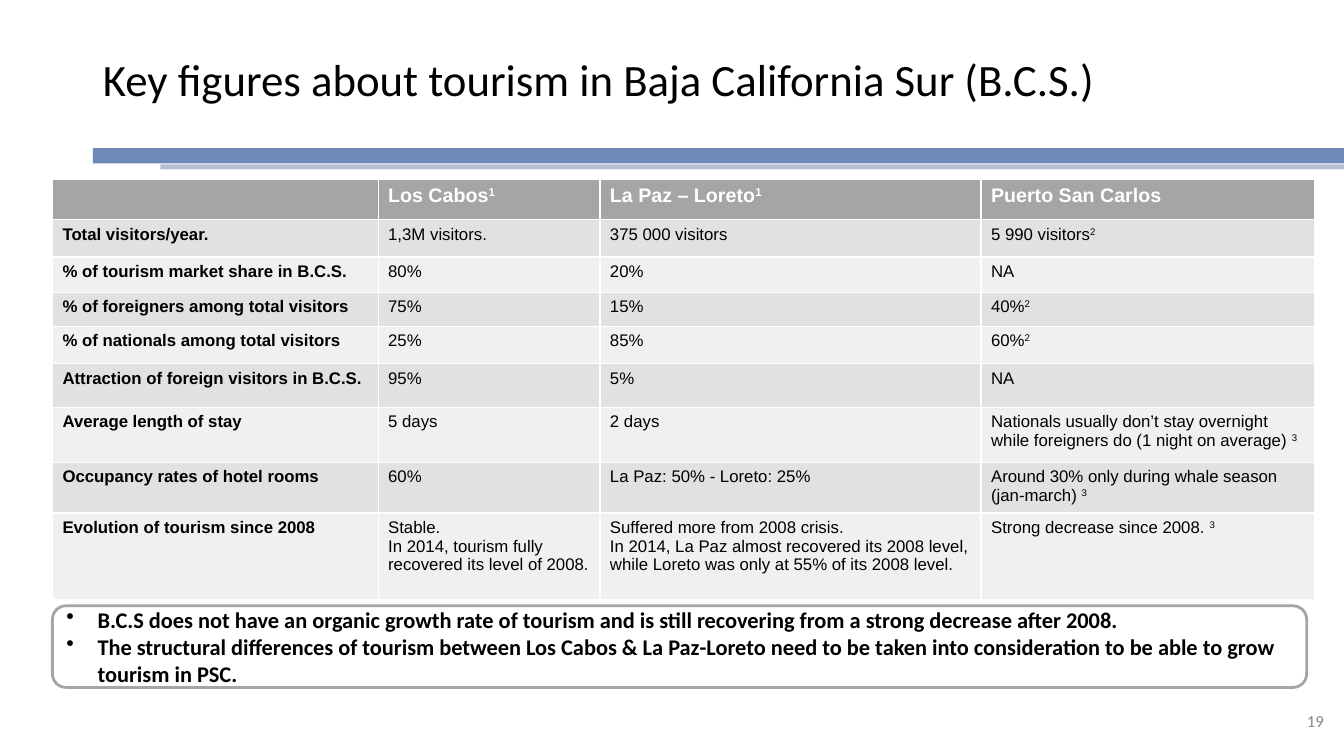
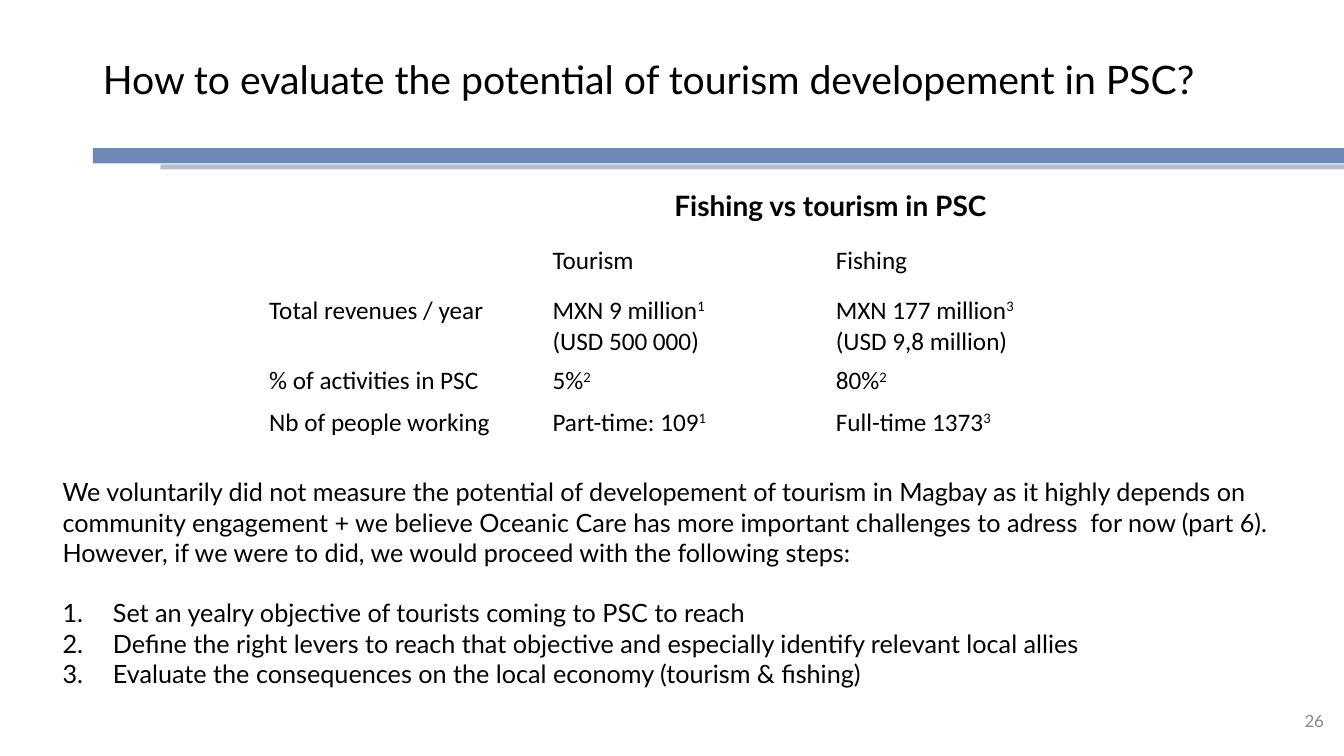
"""Build two slides about tourism in Baja California Sur."""
from lxml import etree
from pptx import Presentation
from pptx.dml.color import RGBColor
from pptx.enum import shapes, text
from pptx.oxml import ns
from pptx.util import Inches, Pt

BLACK, WHITE, GREY, NUMBER_GREY = "000000", "FFFFFF", "A5A5A5", "888888"
BANDING = ("E1E1E1", "F0F0F0")
BANDS = ((0.92, 1.47, 0.15, "2F5597", 69), (1.59, 1.63, 0.05, "002060", 29))
TITLE_ONLY, TITLE_AND_BODY = 5, 1
WIDTH, HEIGHT, MARGIN = 13.33, 7.5, 0.52


def colour(value):
    """Turn a hex string into a colour."""
    return RGBColor.from_string(value)


def inches(*lengths):
    """Turn several numbers into lengths."""
    return [Inches(length) for length in lengths]


class SlideBuilder:
    """Hold the shared style and the current slide."""

    def __init__(self):
        """Start an empty wide deck."""
        self.deck = Presentation()
        self.deck.slide_width, self.deck.slide_height = inches(WIDTH, HEIGHT)
        self.page = None
        self.font = None

    def start(self, layout, title, size, number, font):
        """Add a slide with its bands, title and number."""
        self.page = self.deck.slides.add_slide(self.deck.slide_layouts[layout])
        self.font = font
        for left, top, height, shade, opacity in BANDS:
            self.band(left, top, height, shade, opacity)
        box = self.page.shapes.title
        self.place(box, 0.92, 0.26, 12.05, 1.1)
        frame = box.text_frame
        frame.margin_top = frame.margin_bottom = Inches(0.1)
        frame.vertical_anchor = text.MSO_ANCHOR.MIDDLE
        self.set_text(frame, title, size)
        frame.paragraphs[0].alignment = text.PP_ALIGN.LEFT
        frame.paragraphs[0].line_spacing = 0.9
        footer = self.label(number, 10.23, 6.95, 3, 0.4, 12, NUMBER_GREY)
        footer.vertical_anchor = text.MSO_ANCHOR.MIDDLE
        footer.paragraphs[0].alignment = text.PP_ALIGN.RIGHT

    def place(self, box, left, top, width, height):
        """Move a placeholder and stop it from resizing its text."""
        box.left, box.top, box.width, box.height = inches(left, top, width, height)
        box.text_frame.auto_size = text.MSO_AUTO_SIZE.NONE

    def band(self, left, top, height, shade, opacity):
        """Draw a translucent band running to the right edge."""
        box = self.page.shapes.add_shape(
            shapes.MSO_SHAPE.RECTANGLE, *inches(left, top, WIDTH - left, height))
        box.shadow.inherit = False
        box.fill.solid()
        box.fill.fore_color.rgb = colour(shade)
        box.line.fill.background()
        tint = box.element.spPr.find(".//" + ns.qn("a:srgbClr"))
        etree.SubElement(tint, ns.qn("a:alpha")).set("val", str(opacity * 1000))

    def set_text(self, frame, content, size, shade=BLACK, bold=False, font=None):
        """Fill a frame line by line; a caret opens a superscript."""
        lines = [line.partition("^") for line in content.split("\n")]
        frame.text = "\n".join(plain for plain, _, _ in lines)
        for paragraph, (_, _, raised) in zip(frame.paragraphs, lines):
            if raised:
                span = paragraph.add_run()
                span.text = raised
                span._r.get_or_add_rPr().set("baseline", "30000")
            for span in paragraph.runs:
                span.font.name = font or self.font
                span.font.size = Pt(size)
                span.font.bold = bold
                span.font.color.rgb = colour(shade)

    def bullet(self, paragraph, kind, indent=0, **attributes):
        """Set the list marker and hanging indent of a paragraph."""
        properties = paragraph._p.get_or_add_pPr()
        properties.set("marL", str(Inches(indent)))
        properties.set("indent", str(-Inches(indent)))
        marker = etree.SubElement(properties, ns.qn("a:" + kind))
        for name, value in attributes.items():
            marker.set(name, value)

    def label(self, content, left, top, width, height, size, shade=BLACK, bold=False):
        """Add a text box and return its frame."""
        box = self.page.shapes.add_textbox(*inches(left, top, width, height))
        box.text_frame.word_wrap = True
        self.set_text(box.text_frame, content, size, shade, bold)
        return box.text_frame

    def callout(self, content, left, top, width, height, size):
        """Add a rounded outline box with a bulleted list."""
        box = self.page.shapes.add_shape(
            shapes.MSO_SHAPE.ROUNDED_RECTANGLE, *inches(left, top, width, height))
        box.shadow.inherit = False
        box.fill.solid()
        box.fill.fore_color.rgb = colour(WHITE)
        box.line.color.rgb = colour(GREY)
        box.line.width = Pt(2)
        frame = box.text_frame
        frame.word_wrap = True
        frame.vertical_anchor = text.MSO_ANCHOR.MIDDLE
        self.set_text(frame, content, size, bold=True)
        for paragraph in frame.paragraphs:
            paragraph.alignment = text.PP_ALIGN.LEFT
            self.bullet(paragraph, "buChar", 0.31, char="•")

    def steps(self, intro, items, left, top, width, height, size):
        """Fill the body placeholder with an introduction and numbered steps."""
        box = self.page.placeholders[1]
        self.place(box, left, top, width, height)
        self.set_text(box.text_frame, "\n".join(intro + items), size)
        for index, paragraph in enumerate(box.text_frame.paragraphs):
            if index < len(intro):
                self.bullet(paragraph, "buNone")
            else:
                self.bullet(paragraph, "buAutoNum", 0.5, type="arabicPeriod")
            paragraph.space_before = Pt(size * 1.2 if index == len(intro) else 0)

    def table(self, rows, left, top, widths, heights, size, font, styled):
        """Add a table, either banded with a header or plain."""
        area = inches(left, top, sum(widths), sum(heights))
        grid = self.page.shapes.add_table(len(rows), len(widths), *area).table
        grid.first_row = styled
        grid.horz_banding = False
        for column, width in zip(grid.columns, widths):
            column.width = Inches(width)
        for r, (values, height) in enumerate(zip(rows, heights)):
            grid.rows[r].height = Inches(height)
            header = styled and r == 0
            for c, value in enumerate(values):
                cell = grid.cell(r, c)
                if styled:
                    cell.fill.solid()
                    cell.fill.fore_color.rgb = colour(GREY if header else BANDING[(r - 1) % 2])
                else:
                    cell.fill.background()
                self.set_text(cell.text_frame, value, size + 2 * header,
                              WHITE if header else BLACK, styled and (header or c == 0), font)


KEY_FIGURES = [
    ("", "Los Cabos^1", "La Paz – Loreto^1", "Puerto San Carlos"),
    ("Total visitors/year.", "1,3M visitors.", "375 000 visitors", "5 990 visitors^2"),
    ("% of tourism market share in B.C.S.", "80%", "20%", "NA"),
    ("% of foreigners among total visitors", "75%", "15%", "40%^2"),
    ("% of nationals among total visitors", "25%", "85%", "60%^2"),
    ("Attraction of foreign visitors in B.C.S.", "95%", "5%", "NA"),
    ("Average length of stay", "5 days", "2 days",
     "Nationals usually don’t stay overnight while foreigners do (1 night on average) ^3"),
    ("Occupancy rates of hotel rooms", "60%", "La Paz: 50% - Loreto: 25%",
     "Around 30% only during whale season (jan-march) ^3"),
    ("Evolution of tourism since 2008",
     "Stable.\nIn 2014, tourism fully recovered its level of 2008.",
     "Suffered more from 2008 crisis.\nIn 2014, La Paz almost recovered its 2008 level, "
     "while Loreto was only at 55% of its 2008 level.",
     "Strong decrease since 2008. ^3"),
]
FINDINGS = (
    "B.C.S does not have an organic growth rate of tourism and is still recovering "
    "from a strong decrease after 2008.\n"
    "The structural differences of tourism between Los Cabos & La Paz-Loreto need to be "
    "taken into consideration to be able to grow tourism in PSC.")
FISHING_TOURISM = [
    ("", "Tourism", "Fishing"),
    ("Total revenues / year", "MXN 9 million^1\n(USD 500 000)",
     "MXN 177 million^3\n(USD 9,8 million)"),
    ("% of activities in PSC", "5%^2", "80%^2"),
    ("Nb of people working", "Part-time: 109^1", "Full-time 1373^3"),
]
INTRO = [
    "We voluntarily did not measure the potential of developement of tourism in Magbay as it "
    "highly depends on community engagement + we believe Oceanic Care has more important "
    "challenges to adress  for now (part 6).",
    "However, if we were to did, we would proceed with the following steps:",
]
STEPS = [
    "Set an yealry objective of tourists coming to PSC to reach",
    "Define the right levers to reach that objective and especially identify relevant "
    "local allies",
    "Evaluate the consequences on the local economy (tourism & fishing)",
]


def main():
    """Build and save the deck."""
    builder = SlideBuilder()

    builder.start(TITLE_ONLY, "Key figures about tourism in Baja California Sur (B.C.S.)",
                  32, "19", "Calibri")
    builder.table(KEY_FIGURES, MARGIN, 1.78, (3.23, 2.2, 3.78, 3.31),
                  (0.33, 0.37, 0.35, 0.34, 0.37, 0.43, 0.55, 0.5, 0.86), 12, "Arial", True)
    builder.callout(FINDINGS, MARGIN, 6.01, 12.44, 0.81, 16)

    builder.start(TITLE_AND_BODY,
                  "How to evaluate the potential of tourism developement in PSC?",
                  28, "26", "Lato")
    builder.table(FISHING_TOURISM, 2.57, 2.39, (2.81,) * 3, (0.49, 0.7, 0.41, 0.41),
                  18, "Calibri", False)
    builder.steps(INTRO, STEPS, MARGIN, 4.68, 12.52, 2.22, 18)
    builder.label("Fishing vs tourism in PSC", 6.59, 1.82, 3.7, 0.44, 20, bold=True)

    builder.deck.save("out.pptx")


if __name__ == "__main__":
    main()
